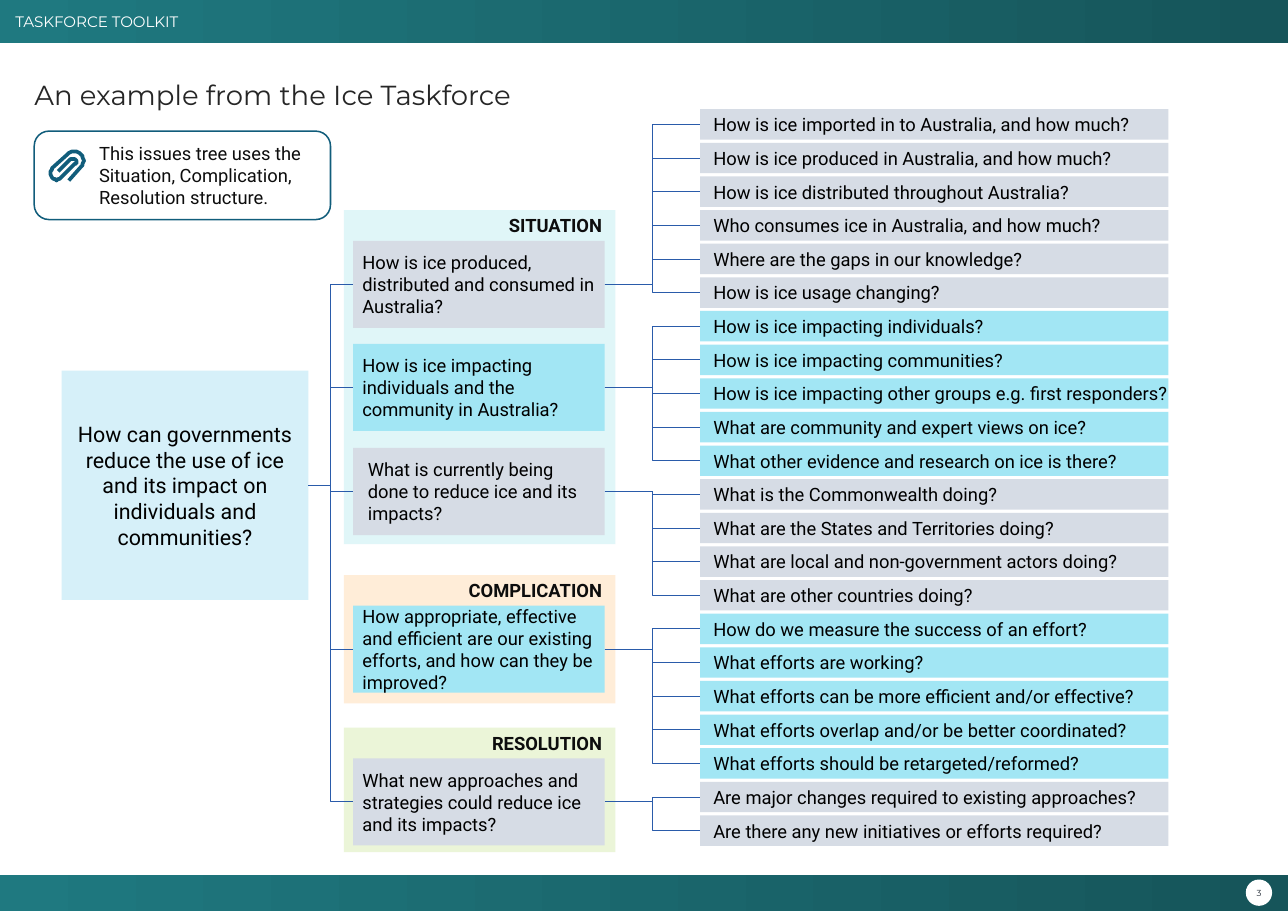
import math
from dataclasses import dataclass

import pptx
import pptx.dml.color
import pptx.enum.dml
import pptx.enum.shapes
import pptx.enum.text
import pptx.oxml
import pptx.util

Pt = pptx.util.Pt
RGB = pptx.dml.color.RGBColor.from_string
Kind = pptx.enum.shapes.MSO_SHAPE
Link = pptx.enum.shapes.MSO_CONNECTOR
Anchor = pptx.enum.text.MSO_ANCHOR
Align = pptx.enum.text.PP_ALIGN


@dataclass(frozen=True)
class Theme:
    head: str = "Montserrat"
    body: str = "Roboto"
    black: str = "000000"
    ink: str = "0D0D0D"
    title: str = "262626"
    page: str = "222A35"
    white: str = "FFFFFF"
    teal: str = "1F7980"
    deep: str = "16555A"
    line: str = "2A5BAA"
    clip: str = "115D7B"
    root: str = "D6F0F9"
    grey: str = "D6DCE5"
    cyan: str = "A2E6F4"
    sky: str = "E0F6F8"
    peach: str = "FFEDD8"
    lime: str = "EBF5D8"
    big: float = 18
    mid: float = 14
    text: float = 12
    band: float = 9.9
    tiny: float = 5.7


T = Theme()

HEADER = "TASKFORCE TOOLKIT"
TITLE = "An example from the Ice Taskforce"
NOTE = "This issues tree uses the Situation, Complication, Resolution structure."
ROOT = "How can governments reduce the use of ice and its impact on individuals and communities?"

# label, top, height, fill
PANELS = [
    ("SITUATION", 137.4, 218.2, T.sky),
    ("COMPLICATION", 375.9, 83.8, T.peach),
    ("RESOLUTION", 475.6, 81.4, T.lime),
]

# question, top, fill, left inset, right inset, sub-questions
TREE = [
    ("How is ice produced, distributed and consumed in Australia?", 157.5, T.grey, 6, 3, [
        "How is ice imported in to Australia, and how much?",
        "How is ice produced in Australia, and how much?",
        "How is ice distributed throughout Australia?",
        "Who consumes ice in Australia, and how much?",
        "Where are the gaps in our knowledge?",
        "How is ice usage changing?",
    ]),
    ("How is ice impacting individuals and the community in Australia?", 224.8, T.cyan, 6, 3, [
        "How is ice impacting individuals?",
        "How is ice impacting communities?",
        "How is ice impacting other groups e.g. first responders?",
        "What are community and expert views on ice?",
        "What other evidence and research on ice is there?",
    ]),
    ("What is currently being done to reduce ice and its impacts?", 292.8, T.grey, 9.6, 9.6, [
        "What is the Commonwealth doing?",
        "What are the States and Territories doing?",
        "What are local and non-government actors doing?",
        "What are other countries doing?",
    ]),
    ("How appropriate, effective and efficient are our existing efforts, "
     "and how can they be improved?", 395.8, T.cyan, 6, 6, [
        "How do we measure the success of an effort?",
        "What efforts are working?",
        "What efforts can be more efficient and/or effective?",
        "What efforts overlap and/or be better coordinated?",
        "What efforts should be retargeted/reformed?",
    ]),
    ("What new approaches and strategies could reduce ice and its impacts?", 495.6, T.grey, 6, 6, [
        "Are major changes required to existing approaches?",
        "Are there any new initiatives or efforts required?",
    ]),
]

WIDE, HIGH = 841.7, 595.4
LEAF_TOP, LEAF_STEP = 71.4, 21.98
# Bends of the paper clip: centre x, centre y, radius, start and end degrees
BENDS = [(48.4, 105.1, 6.2, 45, -135), (37.2, 113.4, 4.2, 225, 45), (47.9, 105.8, 2, 45, -135)]
CLIP_START, CLIP_END = (44.6, 118.1), (38.5, 112)


def write(shape, text, size, color, font=T.body, inset=(0, 0, 0, 0),
          align=Align.LEFT, anchor=Anchor.MIDDLE, bold=False, wrap=True):
    frame = shape.text_frame
    frame.auto_size = pptx.enum.text.MSO_AUTO_SIZE.NONE
    frame.word_wrap = wrap
    frame.vertical_anchor = anchor
    frame.margin_left, frame.margin_top, frame.margin_right, frame.margin_bottom = map(Pt, inset)
    para = frame.paragraphs[0]
    para.text = text
    para.alignment = align
    para.font.name, para.font.size, para.font.bold = font, Pt(size), bold
    para.font.color.rgb = RGB(color)
    return para


def draw(slide, box, fill, kind=Kind.RECTANGLE):
    """Add a borderless shape; a pair of colours makes a gradient."""
    shape = slide.shapes.add_shape(kind, *map(Pt, box))
    shape.shadow.inherit = False
    shape.line.fill.background()
    if isinstance(fill, tuple):
        shape.fill.gradient()
        shape.fill.gradient_angle = 0
        for stop, color in zip(shape.fill.gradient_stops, fill):
            stop.color.rgb = RGB(color)
    else:
        shape.fill.solid()
        shape.fill.fore_color.rgb = RGB(fill)
    return shape


def join(slide, start, end):
    """Link the right side of one box to the left side of another."""
    link = slide.shapes.add_connector(Link.ELBOW, 0, 0, 0, 0)
    link.begin_connect(start, 3)
    link.end_connect(end, 1)
    link.line.color.rgb = RGB(T.line)
    link.line.width = Pt(0.5)
    props = link.element.spPr
    props.append(props.makeelement(pptx.oxml.ns.qn("a:effectLst"), {}))


def frame_page(slide):
    shades = (T.teal, T.deep)
    top = draw(slide, (0, 0, WIDE, 28.1), shades)
    write(top, HEADER, T.band, T.white, T.head, (10, 4.3, 5, 4.3))
    draw(slide, (0, 571.7, WIDE, HIGH - 571.7), shades)
    badge = draw(slide, (814.1, 574.8, 17.2, 17.2), T.white, Kind.OVAL)
    write(badge, "3", T.tiny, T.page, T.head, align=Align.CENTER, wrap=False)
    title = slide.shapes.title
    title.left, title.top, title.width, title.height = map(Pt, (22.4, 49, 345, 23.8))
    para = write(title, TITLE, T.big, T.title, T.head, anchor=Anchor.TOP)
    para.line_spacing = 1.1


def draw_tree(slide):
    for label, top, high, fill in PANELS:
        panel = draw(slide, (224.8, top, 177.4, high), fill)
        write(panel, label, T.text, T.ink, inset=(39.6, 2.9, 8.6, 8.6),
              align=Align.RIGHT, anchor=Anchor.TOP, bold=True)
    root = draw(slide, (40.3, 242.2, 161.3, 149.8), T.root)
    write(root, ROOT, T.mid, T.black, inset=(9.4,) * 4, align=Align.CENTER)
    row = 0
    for text, top, fill, left, right, leaves in TREE:
        branch = draw(slide, (230.8, top, 164.4, 56.9), fill)
        write(branch, text, T.text, T.black, inset=(left, 9.4, right, 9.4))
        join(slide, root, branch)
        for query in leaves:
            leaf = draw(slide, (457.6, LEAF_TOP + row * LEAF_STEP, 306, 19.9), fill)
            write(leaf, query, T.text, T.black, inset=(8.5, 5.8, 0, 5.8))
            join(slide, branch, leaf)
            row += 1


def draw_note(slide):
    note = draw(slide, (22.4, 85.7, 193.6, 57.8), T.white, Kind.ROUNDED_RECTANGLE)
    note.line.color.rgb = RGB(T.clip)
    note.line.width = Pt(1)
    write(note, NOTE, T.text, T.ink, inset=(39.6, 8.6, 8.6, 8.6))

    points = []
    for x, y, radius, start, end in BENDS:
        for step in range(13):
            turn = math.radians(start + (end - start) * step / 12)
            points.append((x + radius * math.cos(turn), y + radius * math.sin(turn)))
    points.append(CLIP_END)
    path = slide.shapes.build_freeform(*CLIP_START, scale=Pt(1))
    path.add_line_segments(points, close=False)
    clip = path.convert_to_shape()
    clip.shadow.inherit = False
    clip.fill.background()
    clip.line.color.rgb = RGB(T.clip)
    clip.line.width = Pt(2.4)


def main():
    deck = pptx.Presentation()
    deck.slide_width, deck.slide_height = Pt(WIDE), Pt(HIGH)
    slide = deck.slides.add_slide(deck.slide_layouts[5])
    frame_page(slide)
    draw_tree(slide)
    draw_note(slide)
    deck.save("out.pptx")


if __name__ == "__main__":
    main()
